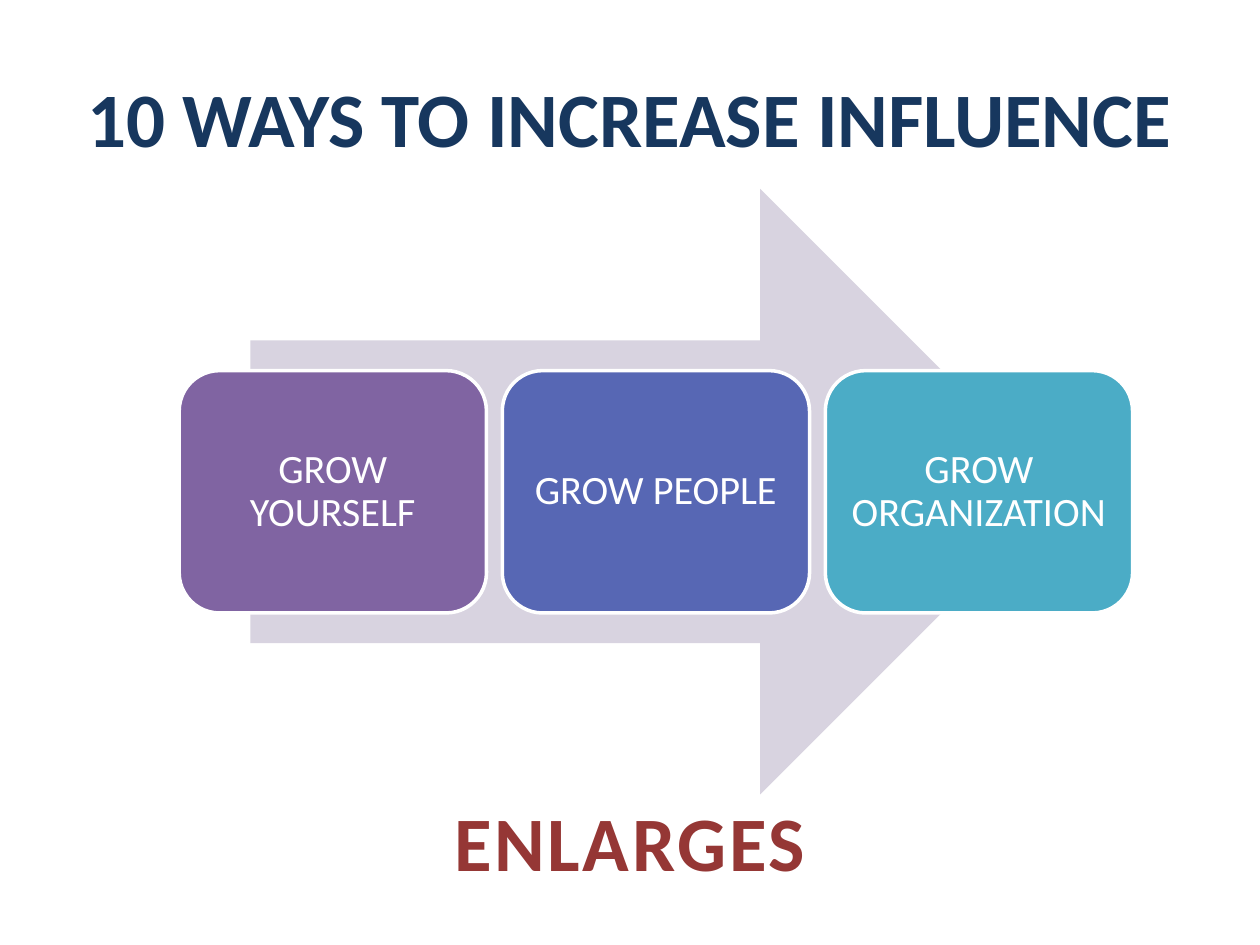
from pptx import Presentation
from pptx.dml.color import RGBColor
from pptx.enum.shapes import MSO_SHAPE
from pptx.enum.text import MSO_ANCHOR, PP_ALIGN
from pptx.util import Pt

RIGHT_ARROW = MSO_SHAPE.RIGHT_ARROW
ROUNDED_RECTANGLE = MSO_SHAPE.ROUNDED_RECTANGLE
MIDDLE = MSO_ANCHOR.MIDDLE
CENTER = PP_ALIGN.CENTER

NAVY = RGBColor(0x17, 0x37, 0x5E)
RED = RGBColor(0x95, 0x37, 0x35)
LAVENDER = RGBColor(0xD8, 0xD3, 0xE0)
PURPLE = RGBColor(0x80, 0x64, 0xA2)
INDIGO = RGBColor(0x57, 0x67, 0xB4)
TEAL = RGBColor(0x4B, 0xAC, 0xC6)
WHITE = RGBColor(0xFF, 0xFF, 0xFF)

FONT = "Calibri"
STEPS = [
    ("GROW YOURSELF", PURPLE),
    ("GROW PEOPLE", INDIGO),
    ("GROW ORGANIZATION", TEAL),
]
STEP_LEFT, STEP_TOP = 102.4, 211.8
STEP_WIDTH, STEP_HEIGHT = 175.6, 138.5
STEP_PITCH = 184.6


def write_text(shape, text, size, color, bold=False):
    """Write one centred paragraph into a shape and return it."""
    frame = shape.text_frame
    frame.word_wrap = True
    frame.vertical_anchor = MIDDLE
    paragraph = frame.paragraphs[0]
    paragraph.text = text
    paragraph.alignment = CENTER
    font = paragraph.font
    font.name, font.size, font.bold = FONT, Pt(size), bold
    font.color.rgb = color
    return paragraph


def add_heading(slide, text, top, color, spacing=0):
    """Add a large bold line across the slide, letter-spaced in points."""
    box = slide.shapes.add_textbox(Pt(36), Pt(top), Pt(648), Pt(90))
    paragraph = write_text(box, text, 44, color, bold=True)
    if spacing:
        properties = paragraph.runs[0].font._element
        properties.set("spc", str(round(spacing * 100)))


def add_filled_shape(slide, kind, left, top, width, height, color):
    """Add a flat preset shape without an outline."""
    shape = slide.shapes.add_shape(kind, Pt(left), Pt(top), Pt(width), Pt(height))
    shape.shadow.inherit = False
    shape.fill.solid()
    shape.fill.fore_color.rgb = color
    shape.line.fill.background()
    return shape


def add_step(slide, index, text, color):
    """Add one rounded step of the process."""
    left = STEP_LEFT + index * STEP_PITCH
    step = add_filled_shape(
        slide, ROUNDED_RECTANGLE, left, STEP_TOP, STEP_WIDTH, STEP_HEIGHT, color
    )
    step.line.color.rgb = WHITE
    step.line.width = Pt(2)
    frame = step.text_frame
    frame.margin_left = frame.margin_right = Pt(7)
    frame.margin_top = frame.margin_bottom = Pt(7)
    write_text(step, text, 23, WHITE).line_spacing = 0.9


def main():
    """Build and save the slide."""
    presentation = Presentation()
    presentation.slide_width, presentation.slide_height = Pt(720), Pt(540)
    slide = presentation.slides.add_slide(presentation.slide_layouts[6])
    add_heading(slide, "10 WAYS TO INCREASE INFLUENCE", 21.6, NAVY)
    add_heading(slide, "ENLARGES", 435.6, RED, spacing=1.5)
    add_filled_shape(slide, RIGHT_ARROW, 143, 108, 464.4, 346, LAVENDER)
    for index, (text, color) in enumerate(STEPS):
        add_step(slide, index, text, color)
    presentation.save("out.pptx")


if __name__ == "__main__":
    main()
